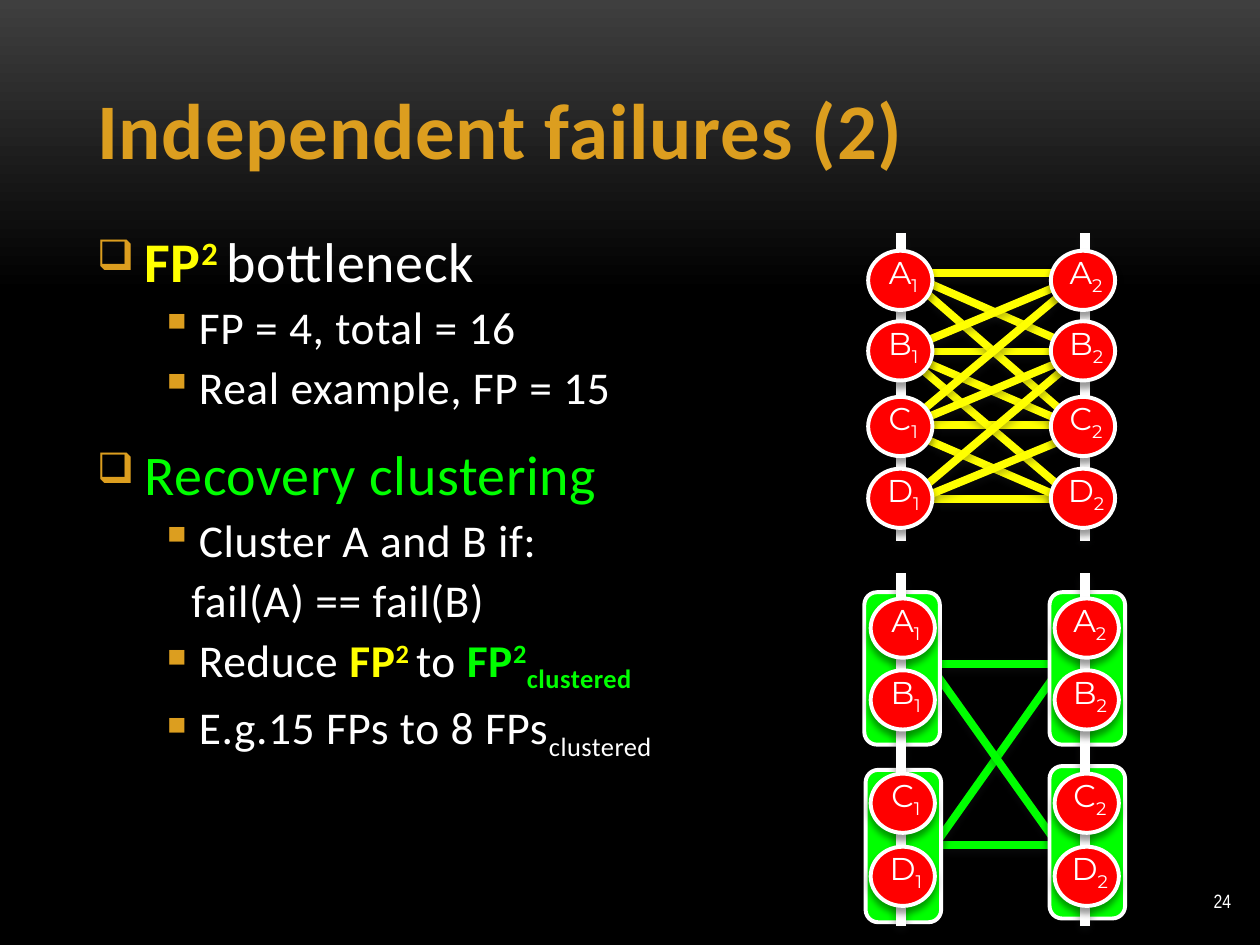
"""Build the slide on independent failures and recovery clustering."""
from dataclasses import dataclass

from lxml.etree import SubElement
from pptx import Presentation
from pptx.dml.color import RGBColor
from pptx.enum.shapes import MSO_CONNECTOR, MSO_SHAPE
from pptx.enum.text import MSO_ANCHOR, PP_ALIGN
from pptx.oxml.ns import qn
from pptx.util import Inches, Pt

WHITE, YELLOW, GREEN, RED, GOLD = "FFFFFF", "FFFF00", "00FF00", "FF0000", "DC9E1F"
SUPER, SUB = 30, -25
BODY_FONT, NODE_FONT = "Calibri", "Montserrat"


@dataclass(frozen=True)
class Run:
    text: str
    color: str = WHITE
    bold: bool = False
    base: int = 0


@dataclass(frozen=True)
class Para:
    runs: tuple[Run, ...]
    size: float = 26
    before: float = 3
    left: float = 0.81
    hang: float = 0.31
    bullet: str = "▪"
    bullet_size: int = 100


@dataclass(frozen=True)
class Shadow:
    color: str
    alpha: int
    blur: float
    dist: float


@dataclass(frozen=True)
class Wire:
    x1: float
    y1: float
    x2: float
    y2: float
    color: str
    width: float = 4.5


LINE_SHADOW = Shadow("1F2123", 35, 5, 2)
SHAPE_SHADOW = Shadow("000000", 40, 4, 3.4)


def rgb(color: str) -> RGBColor:
    return RGBColor.from_string(color)


def add_run(p, run: Run, size: float, font: str, spacing: float = 0) -> None:
    r = p.add_run()
    r.text = run.text
    r.font.size, r.font.name, r.font.bold = Pt(size), font, run.bold
    r.font.color.rgb = rgb(run.color)
    rpr = r._r.get_or_add_rPr()
    if run.base:
        rpr.set("baseline", str(run.base * 1000))
    if spacing:
        rpr.set("spc", str(int(spacing * 100)))


def add_para(p, para: Para) -> None:
    p.space_before = Pt(para.before)
    ppr = p._p.get_or_add_pPr()
    ppr.set("marL", str(Inches(para.left)))
    ppr.set("indent", str(-Inches(para.hang)))
    if para.bullet:
        clr = SubElement(ppr, qn("a:buClr"))
        SubElement(clr, qn("a:srgbClr"), val=GOLD)
        SubElement(ppr, qn("a:buSzPct"), val=str(para.bullet_size * 1000))
        SubElement(ppr, qn("a:buChar"), char=para.bullet)
    for run in para.runs:
        add_run(p, run, para.size, BODY_FONT, 0.3)


def add_text(shapes, x: float, y: float, w: float, h: float):
    tf = shapes.add_textbox(Inches(x), Inches(y), Inches(w), Inches(h)).text_frame
    tf.word_wrap = True
    return tf


def add_shadow(sp, shadow: Shadow) -> None:
    effects = SubElement(sp._element.spPr, qn("a:effectLst"))
    outer = SubElement(effects, qn("a:outerShdw"), blurRad=str(Pt(shadow.blur)),
                       dist=str(Pt(shadow.dist)), dir="5400000", rotWithShape="0")
    clr = SubElement(outer, qn("a:srgbClr"), val=shadow.color)
    SubElement(clr, qn("a:alpha"), val=str(shadow.alpha * 1000))


def add_wire(shapes, wire: Wire) -> None:
    line = shapes.add_connector(MSO_CONNECTOR.STRAIGHT, Inches(wire.x1), Inches(wire.y1),
                                Inches(wire.x2), Inches(wire.y2))
    line.line.color.rgb = rgb(wire.color)
    line.line.width = Pt(wire.width)
    add_shadow(line, LINE_SHADOW)


def add_box(shapes, kind, x: float, y: float, w: float, h: float, color: str) -> None:
    sp = shapes.add_shape(kind, Inches(x), Inches(y), Inches(w), Inches(h))
    sp.fill.solid()
    sp.fill.fore_color.rgb = rgb(color)
    sp.line.color.rgb = rgb(WHITE)
    sp.line.width = Pt(2.25)
    add_shadow(sp, SHAPE_SHADOW)


def add_nodes(shapes, columns: tuple[float, ...], rows: tuple[float, ...]) -> None:
    for number, x in enumerate(columns, 1):
        for letter, y in zip("ABCD", rows):
            add_box(shapes, MSO_SHAPE.OVAL, x, y, 0.51, 0.47, RED)
            tf = add_text(shapes, x + 0.03, y + 0.04, 0.5, 0.3)
            tf.word_wrap = False
            tf.margin_top = tf.margin_bottom = 0
            tf.vertical_anchor = MSO_ANCHOR.MIDDLE
            p = tf.paragraphs[0]
            p.alignment = PP_ALIGN.CENTER
            add_run(p, Run(letter), 18, NODE_FONT)
            add_run(p, Run(str(number), base=SUB), 18, NODE_FONT)


def add_rails(shapes, top: float, bottom: float) -> None:
    for x in (7.15, 8.61):
        add_wire(shapes, Wire(x, top, x, bottom, WHITE, 6))


def add_full_mesh(shapes) -> None:
    add_rails(shapes, 1.85, 4.29)
    for y in (2.17, 2.79, 3.37, 3.96):
        add_wire(shapes, Wire(8.35, y, 7.37, y, YELLOW))
    left, right = (2.15, 2.79, 3.4, 4.02), (2.18, 2.79, 3.42, 4.03)
    for i, y1 in enumerate(left):
        for j, y2 in enumerate(right):
            if abs(i - j) in (1, 2):
                add_wire(shapes, Wire(7.15, y1, 8.61, y2, YELLOW))
    add_nodes(shapes, (6.89, 8.34), (1.99, 2.55, 3.15, 3.72))


def add_clustered_mesh(shapes) -> None:
    for y1, y2 in ((5.27, 5.27), (6.71, 6.71), (6.72, 5.32), (5.32, 6.71)):
        add_wire(shapes, Wire(7.41, y1, 8.4, y2, GREEN))
    for x, y in ((6.87, 6.11), (8.33, 4.7), (8.33, 6.08), (6.86, 4.7)):
        add_box(shapes, MSO_SHAPE.ROUNDED_RECTANGLE, x, y, 0.6, 1.21, GREEN)
    add_rails(shapes, 4.55, 7.35)
    add_nodes(shapes, (6.91, 8.37), (4.75, 5.32, 6.14, 6.72))


def heading(*runs: Run) -> Para:
    return Para(runs, 32, 15, 0.38, 0.38, "❑", 75)


BODY = (
    heading(Run("FP", YELLOW, True), Run("2 ", YELLOW, True, SUPER), Run("bottleneck")),
    Para((Run("FP = 4, total = 16"),)),
    Para((Run("Real example, FP = 15"),)),
    heading(Run("Recovery clustering", GREEN)),
    Para((Run("Cluster A and B if:"),)),
    Para((Run("fail(A) == fail(B)"),), left=0.75, hang=0, bullet=""),
    Para((Run("Reduce "), Run("FP", YELLOW, True), Run("2 ", YELLOW, True, SUPER), Run("to "),
          Run("FP", GREEN, True), Run("2", GREEN, True, SUPER),
          Run("clustered", GREEN, True, SUB))),
    Para((Run("E.g.15 FPs to 8 FPs"), Run("clustered", base=SUB))),
)


def main() -> None:
    prs = Presentation()
    prs.slide_width, prs.slide_height = Inches(10), Inches(7.5)
    s = prs.slides.add_slide(prs.slide_layouts[5])
    fill = s.background.fill
    fill.gradient()
    fill.gradient_angle = 270
    for stop, color, position in zip(fill.gradient_stops, ("3F3F3F", "000000"), (0, 0.31)):
        stop.color.rgb, stop.position = rgb(color), position

    title = s.shapes.title
    title.left, title.top = Inches(0.67), Inches(0.19)
    title.width, title.height = Inches(8.67), Inches(1.25)
    title.text_frame.vertical_anchor = MSO_ANCHOR.BOTTOM
    p = title.text_frame.paragraphs[0]
    p.alignment = PP_ALIGN.LEFT
    add_run(p, Run("Independent failures (2)", GOLD, True), 45, BODY_FONT, 0.5)

    tf = add_text(s.shapes, 8.79, 6.95, 1.08, 0.4)
    tf.vertical_anchor = MSO_ANCHOR.MIDDLE
    tf.paragraphs[0].alignment = PP_ALIGN.RIGHT
    add_run(tf.paragraphs[0], Run("24"), 11, "Arial Narrow")

    tf = add_text(s.shapes, 0.67, 1.75, 5.82, 5.2)
    for i, para in enumerate(BODY):
        add_para(tf.add_paragraph() if i else tf.paragraphs[0], para)

    for draw in (add_full_mesh, add_clustered_mesh):
        draw(s.shapes.add_group_shape().shapes)
    prs.save("out.pptx")


if __name__ == "__main__":
    main()
